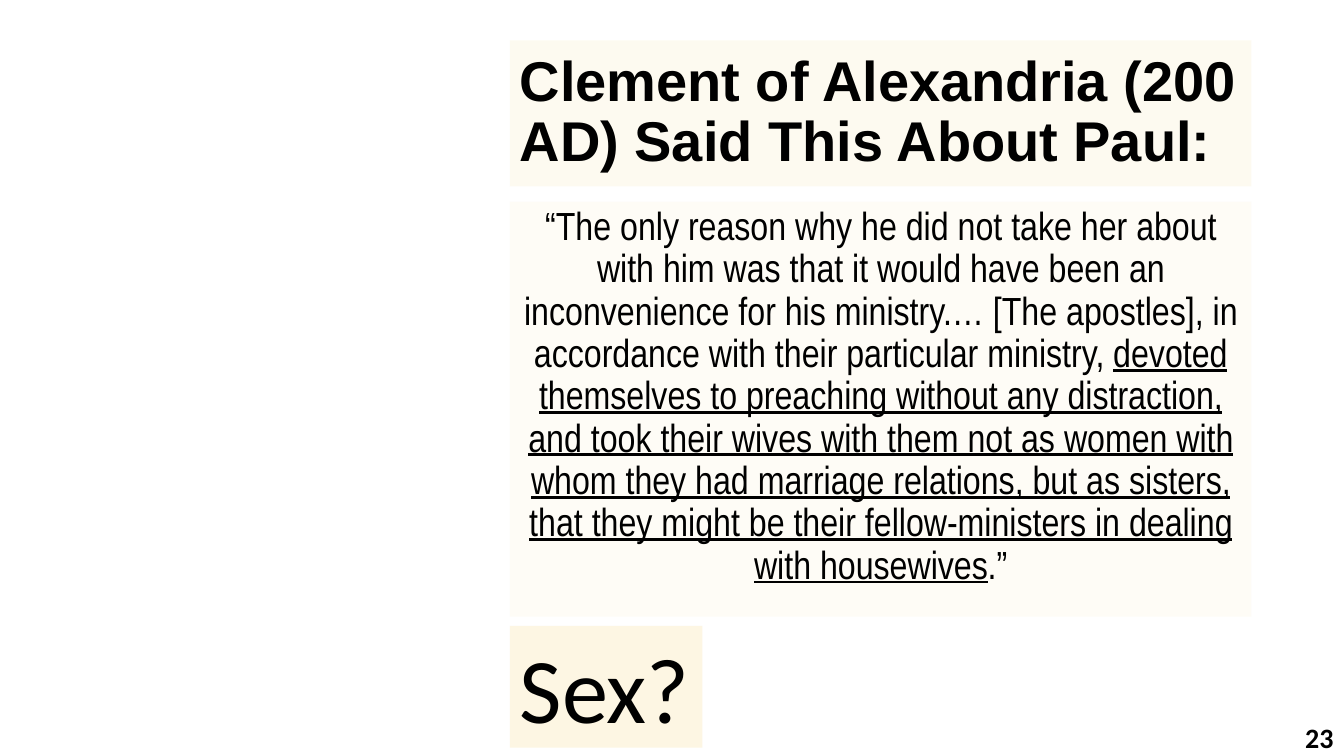
"""Build a slide quoting Clement of Alexandria on Paul."""
from lxml import etree
from pptx import Presentation
from pptx.dml.color import RGBColor
from pptx.enum.text import MSO_ANCHOR, MSO_AUTO_SIZE, PP_ALIGN
from pptx.oxml.ns import qn
from pptx.util import Cm, Pt

TOP, MIDDLE = MSO_ANCHOR.TOP, MSO_ANCHOR.MIDDLE
LEFT, CENTER, RIGHT = PP_ALIGN.LEFT, PP_ALIGN.CENTER, PP_ALIGN.RIGHT
GROW = MSO_AUTO_SIZE.SHAPE_TO_FIT_TEXT
CREAM, BLACK = "FDF6E3", "000000"
COLUMN_LEFT, COLUMN_WIDTH = 12.85, 18.69

QUOTE = [
    ("“The only reason why he did not take her about with him was that it would "
     "have been an inconvenience for his ministry.… [The apostles], in accordance "
     "with their particular ministry, ", {}),
    ("devoted themselves to preaching without any distraction, and took their wives "
     "with them not as women with whom they had marriage relations, but as sisters, "
     "that they might be their fellow-ministers in dealing with housewives",
     {"underline": True}),
    (".”", {}),
]


def color(value):
    """Turn a hex string into a colour."""
    return RGBColor.from_string(value)


def apply_format(target, values):
    """Set every attribute named in values on target."""
    for name, value in values.items():
        setattr(target, name, value)


def fill_box(box, opacity):
    """Fill a box with cream at the given percentage of opacity."""
    box.fill.solid()
    box.fill.fore_color.rgb = color(CREAM)
    if opacity < 100:
        tint = box.element.spPr.find(".//" + qn("a:srgbClr"))
        etree.SubElement(tint, qn("a:alpha"), val=str(opacity * 1000))


def add_text(page, place, spans, font, frame, paragraph):
    """Add a text box holding one paragraph of formatted spans."""
    box = page.shapes.add_textbox(*(Cm(length) for length in place))
    apply_format(box.text_frame, {"word_wrap": True, **frame})
    para = box.text_frame.paragraphs[0]
    apply_format(para, paragraph)
    for text, extra in spans:
        span = para.add_run()
        span.text = text
        apply_format(span.font, {**font, **extra})
        span.font.color.rgb = color(BLACK)
    return box


def main():
    """Create the deck and save it."""
    deck = Presentation()
    deck.slide_width, deck.slide_height = Cm(33.87), Cm(19.05)
    page = deck.slides.add_slide(deck.slide_layouts[6])

    title = add_text(
        page, (COLUMN_LEFT, 1.02, COLUMN_WIDTH, 3.68),
        [("Clement of Alexandria (200 AD) Said This About Paul:", {})],
        {"name": "Arial", "size": Pt(40), "bold": True},
        {"vertical_anchor": MIDDLE}, {"alignment": LEFT, "line_spacing": 0.9})
    fill_box(title, 50)

    quote = add_text(
        page, (COLUMN_LEFT, 5.08, COLUMN_WIDTH, 10.46), QUOTE,
        {"name": "Arial Narrow", "size": Pt(28)},
        {"vertical_anchor": TOP}, {"alignment": CENTER, "line_spacing": 0.9})
    fill_box(quote, 30)

    add_text(
        page, (26.24, 18.06, 7.62, 1.02), [("23", {})],
        {"name": "Calibri", "size": Pt(20), "bold": True},
        {"vertical_anchor": MIDDLE}, {"alignment": RIGHT})

    question = add_text(
        page, (COLUMN_LEFT, 15.77, 4.85, 3.07), [("Sex?", {})],
        {"name": "Calibri", "size": Pt(66)},
        {"word_wrap": False, "auto_size": GROW}, {"alignment": LEFT})
    fill_box(question, 100)

    deck.save("out.pptx")


if __name__ == "__main__":
    main()
